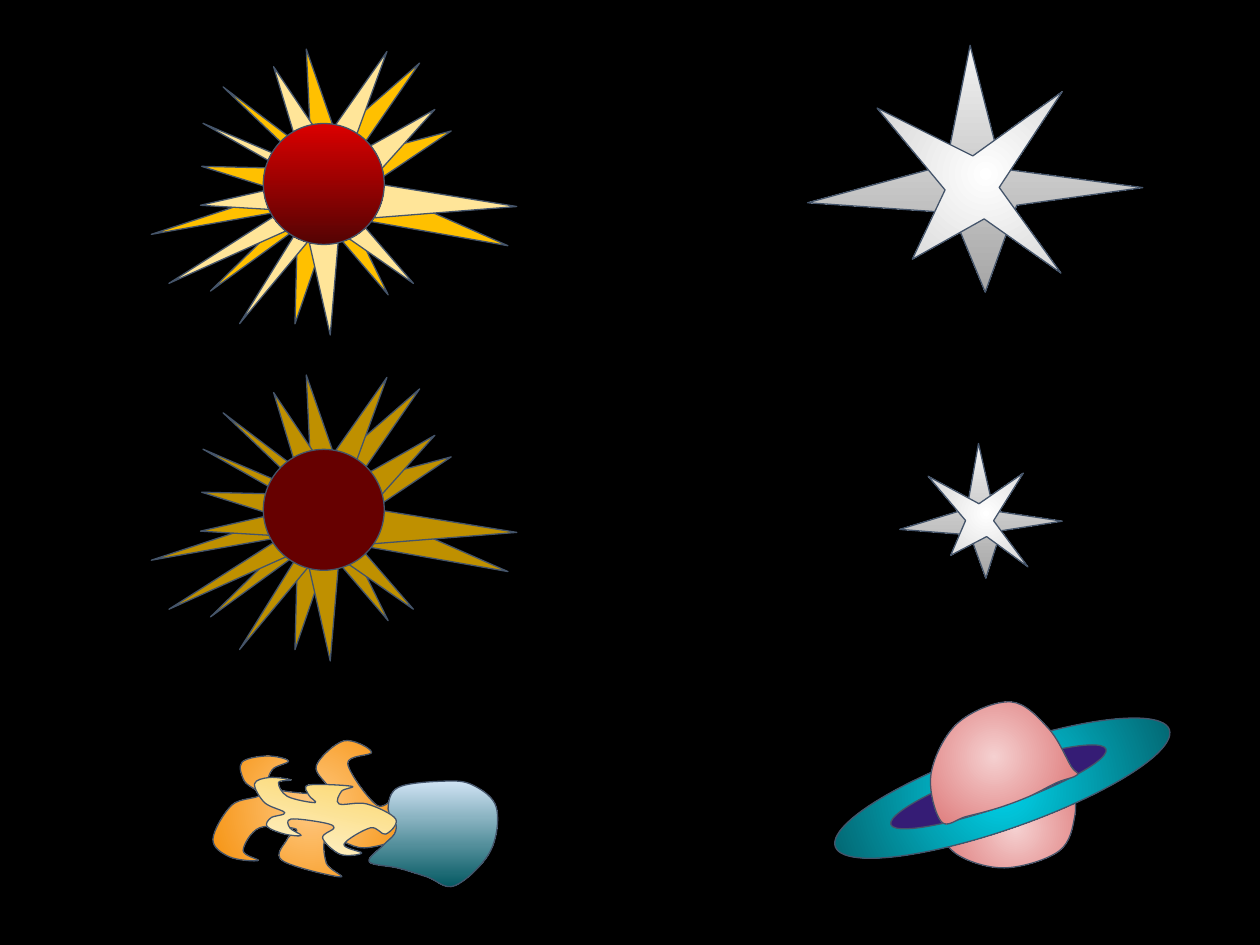
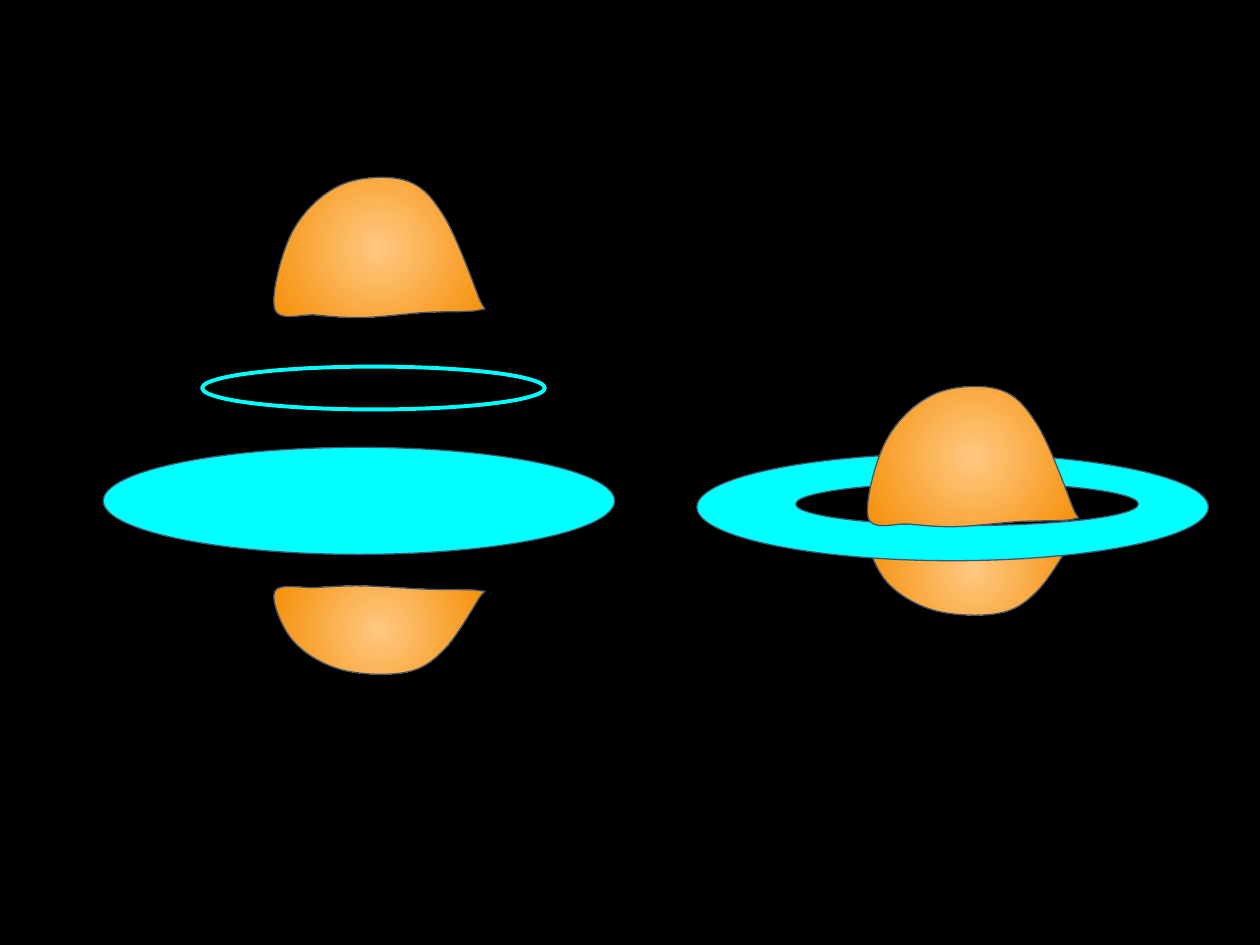
from collections import namedtuple
from math import cos, radians, sin

from lxml import etree
from pptx import Presentation
from pptx.dml.color import RGBColor
from pptx.enum.shapes import MSO_SHAPE
from pptx.oxml.ns import qn
from pptx.util import Pt

OVAL = MSO_SHAPE.OVAL
GRID = 0.72
SPACE = "000000"
EDGE = "44546A"
CYAN = "00FFFF"

Outline = namedtuple("Outline", "points angle curved")
Gradient = namedtuple("Gradient", "first last radial")

ORANGE = Gradient("FFC982", "F58F09", True)
PINK = Gradient("F5D0D0", "D96868", True)
RING_TEAL = Gradient("00D2E9", "045962", True)
STAR_BACK_GREY = Gradient("F2F2F2", "A6A6A6", False)
STAR_FRONT_WHITE = Gradient("FFFFFF", "B3B3B3", True)
ROCK_BLUE = Gradient("CFE2F3", "045962", False)
FLAME_YELLOW = Gradient("FFF6DB", "FAD25C", False)
SUN_RED = Gradient("DB0000", "540303", False)

BACK_RAYS_FRAME = (83.5, 28.1, 200.9, 154.8)
FRONT_RAYS_FRAME = (83.5, 33.1, 200.9, 154.8)
SUN_DISK_FRAME = (150.5, 70.6, 69.1, 69.1)
STAR_BACK_FRAME = (461.5, 25.9, 191.5, 141.1)
STAR_FRONT_FRAME = (492.5, 35.3, 141.1, 128.2)
PINK_CAP_FRAME = (526.3, 403.9, 83.5, 56.9)
OUTER_FLAME_FRAME = (121.7, 422.6, 111.6, 78.5)
INNER_FLAME_FRAME = (142.6, 445.7, 83.5, 40.3)
ROCK_FRAME = (211, 446.4, 73.4, 60.5)
ORANGE_CAP_FRAME = (156.2, 101.5, 121, 79.9)
PLANET_TILT = 340.7


def outline(points, frame, angle=0, curved=False):
    left, top, width, height = frame
    cosine, sine = cos(radians(angle)), sin(radians(angle))
    units = []
    for x, y in points:
        across = x * GRID - left - width / 2
        down = y * GRID - top - height / 2
        units.append(((across * cosine + down * sine) / width + 0.5,
                      (down * cosine - across * sine) / height + 0.5))
    return Outline(units, angle, curved)


def mirrored(source):
    points = [(1 - x, y) for x, y in source.points]
    return Outline(points, (source.angle + 180) % 360, source.curved)


BACK_RAYS = outline(
    [(262, 112), (333, 50), (282, 124), (358, 104), (294, 147), (403, 195), (278, 173),
     (308, 234), (261, 179), (234, 257), (236, 181), (167, 231), (233, 166), (120, 186),
     (223, 152), (160, 132), (245, 134), (177, 69), (247, 122), (243, 39), (266, 105)],
    BACK_RAYS_FRAME, 352.2)
FRONT_RAYS = outline(
    [(253, 118), (307, 41), (276, 126), (345, 87), (293, 145), (410, 164), (284, 174),
     (328, 225), (269, 184), (262, 266), (245, 191), (190, 257), (239, 178), (134, 225),
     (225, 167), (159, 163), (242, 144), (161, 98), (241, 132), (217, 53), (256, 111)],
    FRONT_RAYS_FRAME, 338)
STAR_BACK = outline(
    [(751, 131), (770, 36), (795, 134), (907, 149), (807, 163), (782, 232), (756, 169),
     (641, 161)],
    STAR_BACK_FRAME)
STAR_FRONT = outline(
    [(772, 124), (843, 73), (793, 149), (842, 217), (781, 174), (724, 206), (750, 151),
     (696, 86)],
    STAR_FRONT_FRAME, 45)
PINK_CAP = outline(
    [(747, 652), (739, 614), (760, 574), (802, 557), (832, 578), (850, 608), (855, 615),
     (839, 621), (817, 632), (793, 641), (767, 648)],
    PINK_CAP_FRAME, PLANET_TILT, curved=True)
ORANGE_CAP = outline(
    [(218, 245), (232, 184), (270, 147), (321, 143), (352, 171), (380, 236), (381, 246),
     (337, 248), (288, 252), (251, 250)],
    ORANGE_CAP_FRAME, curved=True)
OUTER_FLAME = outline(
    [(299, 639), (276, 606), (295, 597), (273, 588), (251, 608), (261, 626), (249, 630),
     (215, 625), (216, 611), (229, 604), (212, 600), (192, 605), (194, 620), (206, 631),
     (184, 639), (169, 666), (182, 680), (205, 683), (193, 675), (206, 657), (235, 658),
     (228, 666), (224, 683), (270, 696), (259, 685), (260, 664), (289, 673), (322, 661),
     (316, 634)],
    OUTER_FLAME_FRAME, curved=True)
INNER_FLAME = outline(
    [(294, 657), (273, 670), (287, 677), (270, 678), (256, 665), (265, 657), (257, 653),
     (231, 650), (230, 657), (239, 663), (226, 662), (212, 656), (215, 649), (226, 645),
     (210, 637), (202, 622), (214, 617), (231, 619), (221, 621), (228, 632), (250, 637),
     (245, 631), (245, 623), (279, 624), (271, 628), (269, 638), (291, 638), (314, 650),
     (306, 662)],
    INNER_FLAME_FRAME, 193, curved=True)
ROCK = outline(
    [(352, 620), (316, 625), (308, 642), (314, 653), (313, 662), (304, 671), (293, 684),
     (316, 689), (339, 696), (361, 703), (389, 676), (394, 641), (375, 623)],
    ROCK_FRAME, curved=True)


def color(code):
    return RGBColor.from_string(code)


def paint(shape, fill, line=EDGE, weight=0.75):
    shape.shadow.inherit = False
    if isinstance(fill, Gradient):
        shape.fill.gradient()
        for stop, code in zip(shape.fill.gradient_stops, (fill.first, fill.last)):
            stop.color.rgb = color(code)
        shape.fill.gradient_angle = 270
        if fill.radial:
            make_radial(shape)
    else:
        shape.fill.solid()
        shape.fill.fore_color.rgb = color(fill)
    shape.line.color.rgb = color(line)
    shape.line.width = Pt(weight)


def make_radial(shape):
    linear = next(shape._element.iter(qn("a:lin")))
    gradient = linear.getparent()
    circle = etree.Element(qn("a:path"), {"path": "circle"})
    sides = {side: "50000" for side in "ltrb"}
    etree.SubElement(circle, qn("a:fillToRect"), sides)
    gradient.replace(linear, circle)


def add_oval(shapes, frame, fill, angle=0, **line_format):
    oval = shapes.add_shape(OVAL, *map(Pt, frame))
    oval.rotation = angle
    paint(oval, fill, **line_format)


def add_outline(shapes, form, frame, fill):
    left, top, width, height = map(Pt, frame)
    corners = [(left + x * width, top + y * height) for x, y in form.points]
    builder = shapes.build_freeform(*corners[0])
    builder.add_line_segments(corners[1:], close=True)
    shape = builder.convert_to_shape()
    if form.curved:
        shape.left, shape.top, shape.width, shape.height = left, top, width, height
        bend(shape, [(x - left, y - top) for x, y in corners])
    shape.rotation = form.angle
    paint(shape, fill)


def bend(shape, knots):
    trace = next(shape._element.iter(qn("a:path")))
    trace.set("w", str(shape.width))
    trace.set("h", str(shape.height))
    for child in list(trace):
        trace.remove(child)
    add_step(trace, "a:moveTo", knots[0])
    count = len(knots)
    for index in range(count):
        before, start, end, after = (knots[(index + step) % count] for step in (-1, 0, 1, 2))
        leave = [s + (e - b) / 6 for b, s, e in zip(before, start, end)]
        arrive = [e - (a - s) / 6 for s, e, a in zip(start, end, after)]
        add_step(trace, "a:cubicBezTo", leave, arrive, end)
    add_step(trace, "a:close")


def add_step(trace, tag, *points):
    step = etree.SubElement(trace, qn(tag))
    for x, y in points:
        etree.SubElement(step, qn("a:pt"), {"x": str(round(x)), "y": str(round(y))})


def moved(frame, across=0, down=0):
    left, top, width, height = frame
    return left + across, top + down, width, height


def add_group(page):
    return page.shapes.add_group_shape().shapes


def add_sun(page, down, back_fill, front_fill, disk_fill):
    shapes = add_group(page)
    add_outline(shapes, BACK_RAYS, moved(BACK_RAYS_FRAME, down=down), back_fill)
    add_outline(shapes, FRONT_RAYS, moved(FRONT_RAYS_FRAME, down=down), front_fill)
    add_oval(shapes, moved(SUN_DISK_FRAME, down=down), disk_fill)


def add_star(page, back_frame, front_frame):
    shapes = add_group(page)
    add_outline(shapes, STAR_BACK, back_frame, STAR_BACK_GREY)
    add_outline(shapes, STAR_FRONT, front_frame, STAR_FRONT_WHITE)


def add_tilted_planet(page):
    shapes = add_group(page)
    add_outline(shapes, mirrored(PINK_CAP), (538.6, 451.4, 83.5, 43.9), PINK)
    add_oval(shapes, (471.6, 427, 202.3, 46.8), RING_TEAL, PLANET_TILT)
    add_oval(shapes, (505.4, 438.5, 130.3, 22.3), "351C75", PLANET_TILT)
    add_outline(shapes, PINK_CAP, PINK_CAP_FRAME, PINK)


def add_comet(page):
    shapes = add_group(page)
    add_outline(shapes, OUTER_FLAME, OUTER_FLAME_FRAME, ORANGE)
    add_outline(shapes, ROCK, ROCK_FRAME, ROCK_BLUE)
    add_outline(shapes, INNER_FLAME, INNER_FLAME_FRAME, FLAME_YELLOW)


def add_ringed_planet(shapes, left, bottom_cap, ring, hole, top_cap, **hole_line):
    add_outline(shapes, mirrored(ORANGE_CAP), (left + 97.2, bottom_cap, 121, 50.4), ORANGE)
    add_oval(shapes, (left, ring, 292.3, 61.2), CYAN)
    add_oval(shapes, (left + 56.5, hole, 195.8, 24.5), SPACE, **hole_line)
    add_outline(shapes, ORANGE_CAP, (left + 97.2, top_cap, 121, 79.9), ORANGE)


def add_page(deck):
    page = deck.slides.add_slide(deck.slide_layouts[6])
    page.background.fill.solid()
    page.background.fill.fore_color.rgb = color(SPACE)
    return page


def main():
    deck = Presentation()
    deck.slide_width, deck.slide_height = Pt(720), Pt(540)

    sky = add_page(deck)
    add_sun(sky, 0, "FFC000", "FFE599", SUN_RED)
    add_tilted_planet(sky)
    add_star(sky, STAR_BACK_FRAME, STAR_FRONT_FRAME)
    add_comet(sky)
    add_sun(sky, 186.2, "BF9000", "BF9000", "660000")
    add_star(sky, (514.1, 253.4, 92.9, 77), (524.9, 262.1, 77, 62.6))

    assembly = add_page(deck)
    add_ringed_planet(assembly.shapes, 59, 334.8, 255.6, 209.5, 101.5, line=CYAN, weight=2.25)
    add_ringed_planet(add_group(assembly), 398.2, 301, 259.2, 275.8, 221)

    deck.save("out.pptx")


if __name__ == "__main__":
    main()
